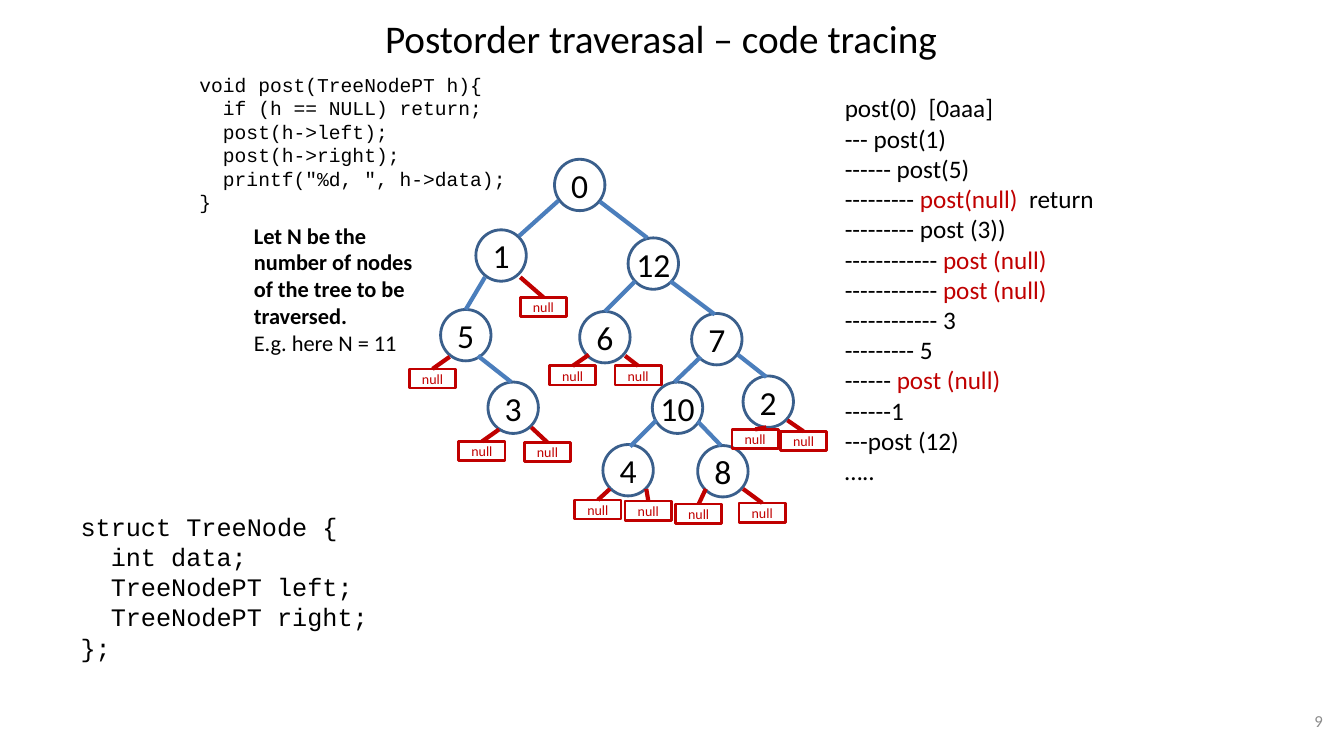
from lxml.etree import SubElement
from pptx import Presentation
from pptx.dml.color import RGBColor
from pptx.enum.shapes import MSO_CONNECTOR, MSO_SHAPE
from pptx.enum.text import MSO_ANCHOR, PP_ALIGN
from pptx.oxml.ns import qn
from pptx.util import Inches, Pt

BLACK, RED, GRAY = "000000", "C00000", "8C8C8C"
NODE_OUTLINE, EDGE_BLUE = "3A5F8C", "4B7EBC"
NODE_SIZE = (0.5, 0.51)
NULL_SIZE = (0.46, 0.19)

title = ["Postorder traverasal – code tracing"]
page_number = ["9"]
post_code = [
    "void post(TreeNodePT h){",
    "  if (h == NULL) return;",
    "  post(h->left);",
    "  post(h->right);",
    '  printf("%d, ", h->data);',
    "}",
]
struct_code = [
    "struct TreeNode {",
    "  int data;",
    "  TreeNodePT left;",
    "  TreeNodePT right;",
    "};",
]
trace = [
    "post(0)  [0aaa]",
    "--- post(1)",
    "------ post(5)",
    ("--------- ", "post(null)", "  return"),
    "--------- post (3))",
    ("------------ ", "post (null)"),
    ("------------ ", "post (null)"),
    "------------ 3",
    "--------- 5",
    ("------ ", "post (null)"),
    "------1",
    "---post (12)",
    "…..",
]
size_note = [
    "Let N be the number of nodes of the tree to be traversed.",
    "E.g. here N = 11",
]
nodes = {
    "0": (5.5, 1.58), "1": (4.72, 2.28), "12": (6.23, 2.36), "5": (4.37, 3.07),
    "6": (5.75, 3.09), "7": (6.86, 3.11), "3": (4.84, 3.79), "10": (6.47, 3.79),
    "2": (7.37, 3.73), "4": (5.98, 4.41), "8": (6.92, 4.42),
}
edges = [
    ((5.54, 1.99), (5.15, 2.34)), ((5.95, 2.0), (6.42, 2.36)),
    ((4.81, 2.75), (4.62, 3.07)), ((6.3, 2.79), (6.0, 3.09)),
    ((6.65, 2.79), (7.09, 3.12)), ((4.74, 3.53), (5.07, 3.79)),
    ((6.95, 3.54), (6.69, 3.79)), ((7.32, 3.52), (7.6, 3.74)),
    ((6.51, 4.17), (6.25, 4.43)), ((6.92, 4.18), (7.15, 4.42)),
]
null_links = [
    ((5.16, 2.75), (5.16, 2.95)), ((4.46, 3.54), (4.06, 3.66)),
    ((5.84, 3.52), (5.45, 3.63)), ((6.2, 3.53), (6.1, 3.63)),
    ((4.95, 4.26), (4.55, 4.38)), ((5.27, 4.24), (5.2, 4.39)),
    ((6.05, 4.85), (5.7, 4.96)), ((6.41, 4.85), (6.2, 4.97)),
    ((7.0, 4.85), (6.7, 5.0)), ((7.37, 4.85), (7.33, 4.99)),
    ((7.6, 4.24), (7.26, 4.26)), ((7.81, 4.17), (7.74, 4.28)),
]

deck = Presentation()
deck.slide_width, deck.slide_height = Inches(13.33), Inches(7.5)
slide = deck.slides.add_slide(deck.slide_layouts[6])


def rgb(color):
    return RGBColor.from_string(color)


def style(paragraph, size, color, face="Calibri", align=PP_ALIGN.LEFT):
    paragraph.alignment = align
    font = paragraph.font
    font.name, font.size, font.color.rgb = face, Pt(size), rgb(color)


def add_text(lines, box, size, color=BLACK, face="Calibri",
             align=PP_ALIGN.LEFT, anchor=MSO_ANCHOR.TOP):
    frame = slide.shapes.add_textbox(*map(Inches, box)).text_frame
    frame.word_wrap = True
    frame.vertical_anchor = anchor
    for index, line in enumerate(lines):
        paragraph = frame.add_paragraph() if index else frame.paragraphs[0]
        style(paragraph, size, color, face, align)
        parts = (line,) if isinstance(line, str) else line
        for position, part in enumerate(parts):
            run = paragraph.add_run()
            run.text = part
            if position == 1:
                run.font.color.rgb = rgb(RED)
    return frame


def add_labelled(kind, label, corner, dimensions, outline, size, color):
    shape = slide.shapes.add_shape(kind, *map(Inches, corner + dimensions))
    shape.shadow.inherit = False
    shape.fill.background()
    shape.line.color.rgb = rgb(outline)
    shape.line.width = Pt(2)
    frame = shape.text_frame
    frame.margin_left = frame.margin_right = 0
    frame.margin_top = frame.margin_bottom = 0
    frame.word_wrap = False
    frame.vertical_anchor = MSO_ANCHOR.MIDDLE
    frame.text = label
    style(frame.paragraphs[0], size, color, align=PP_ALIGN.CENTER)


def add_edge(start, end, color):
    edge = slide.shapes.add_connector(
        MSO_CONNECTOR.STRAIGHT, *map(Inches, start + end))
    edge.line.color.rgb = rgb(color)
    edge.line.width = Pt(3)
    SubElement(edge._element.spPr, qn("a:effectLst"))


add_text(title, (1.83, 0.12, 9.45, 0.51), 28,
         align=PP_ALIGN.CENTER, anchor=MSO_ANCHOR.MIDDLE)
add_text(page_number, (10.11, 6.95, 3.11, 0.4), 12, GRAY,
         align=PP_ALIGN.RIGHT, anchor=MSO_ANCHOR.MIDDLE)
add_text(post_code, (1.88, 0.67, 3.46, 1.51), 14, face="Courier New")
add_text(trace, (8.28, 0.87, 3.28, 4.04), 18)

for value, corner in nodes.items():
    add_labelled(MSO_SHAPE.OVAL, value, corner, NODE_SIZE, NODE_OUTLINE, 24, BLACK)
for start, end in edges:
    add_edge(start, end, EDGE_BLUE)
for start, corner in null_links:
    left, top = corner
    add_edge(start, (left + NULL_SIZE[0] / 2, top), RED)
    add_labelled(MSO_SHAPE.RECTANGLE, "null", corner, NULL_SIZE, RED, 10, RED)

note = add_text(size_note, (2.42, 2.15, 1.96, 1.45), 16)
note.paragraphs[0].font.bold = True
add_text(struct_code, (0.7, 5.02, 3.59, 1.62), 18, face="Courier New")

deck.save("out.pptx")
